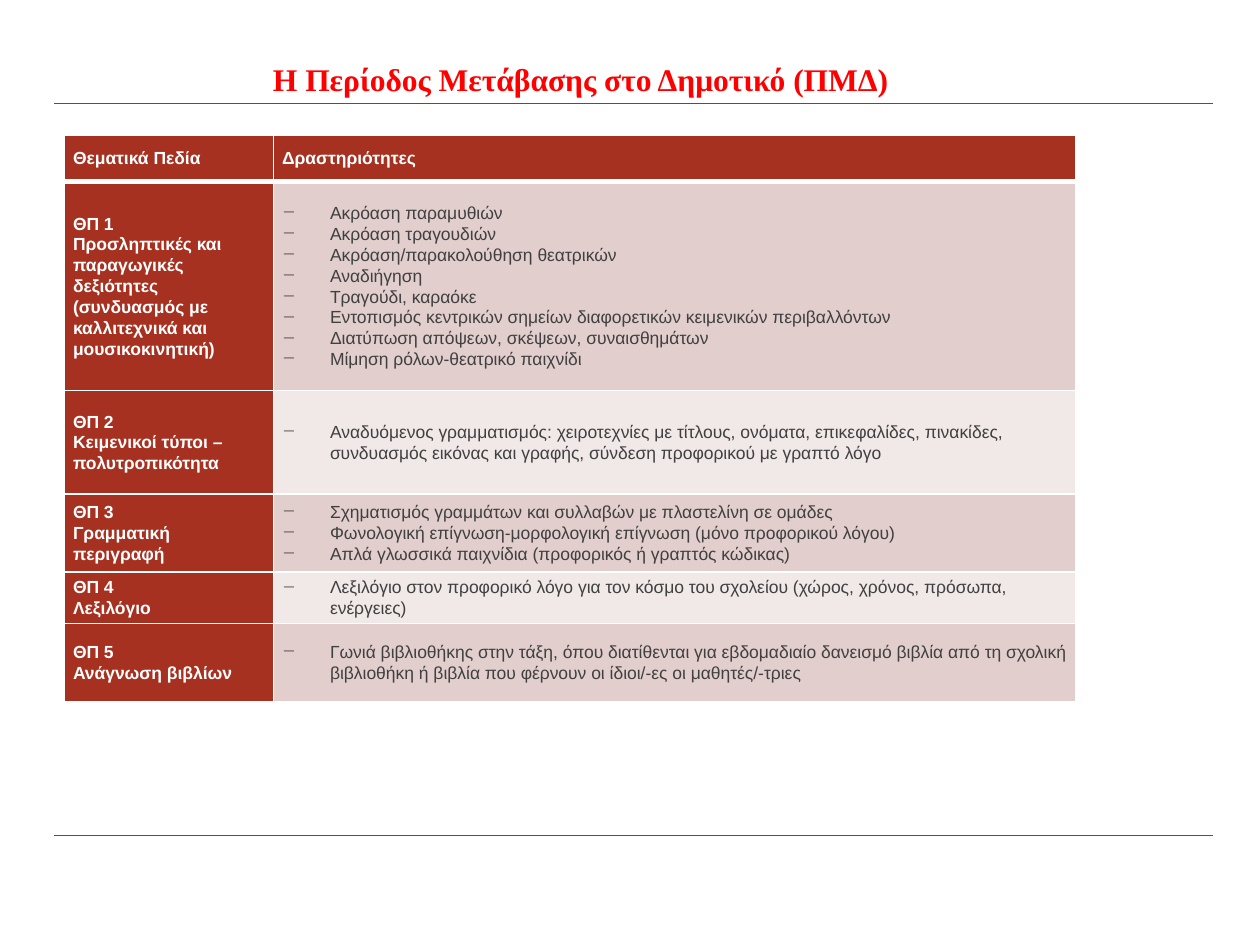
from lxml import etree
from pptx import Presentation
from pptx.dml.color import RGBColor
from pptx.enum.shapes import MSO_CONNECTOR
from pptx.enum.text import MSO_ANCHOR, MSO_AUTO_SIZE, PP_ALIGN
from pptx.oxml.ns import qn
from pptx.util import Inches, Pt

STRAIGHT = MSO_CONNECTOR.STRAIGHT
MIDDLE, BOTTOM = MSO_ANCHOR.MIDDLE, MSO_ANCHOR.BOTTOM
CENTER = PP_ALIGN.CENTER
NO_AUTOFIT = MSO_AUTO_SIZE.NONE

BRICK = RGBColor(0xA6, 0x31, 0x21)
RED = RGBColor(0xFF, 0x00, 0x00)
WHITE = RGBColor(0xFF, 0xFF, 0xFF)
GREY = RGBColor(0x40, 0x40, 0x40)
BANDS = (RGBColor(0xE1, 0xCE, 0xCD), RGBColor(0xF1, 0xE8, 0xE8))

COLUMN_WIDTHS = (1.66, 6.37)
ROW_HEIGHTS = (0.37, 1.66, 0.82, 0.62, 0.41, 0.62)
HEADER = ("Θεματικά Πεδία", "Δραστηριότητες")
FIELDS = [
    (["ΘΠ 1", "Προσληπτικές και παραγωγικές δεξιότητες",
      "(συνδυασμός με καλλιτεχνικά και μουσικοκινητική)"],
     ["Ακρόαση παραμυθιών",
      "Ακρόαση τραγουδιών",
      "Ακρόαση/παρακολούθηση θεατρικών",
      "Αναδιήγηση",
      "Τραγούδι, καραόκε",
      "Εντοπισμός κεντρικών σημείων διαφορετικών κειμενικών περιβαλλόντων",
      "Διατύπωση απόψεων, σκέψεων, συναισθημάτων",
      "Μίμηση ρόλων-θεατρικό παιχνίδι"]),
    (["ΘΠ 2", "Κειμενικοί τύποι – πολυτροπικότητα"],
     ["Αναδυόμενος γραμματισμός: χειροτεχνίες με τίτλους, ονόματα, "
      "επικεφαλίδες, πινακίδες, συνδυασμός εικόνας και γραφής, σύνδεση "
      "προφορικού με γραπτό λόγο"]),
    (["ΘΠ 3", "Γραμματική περιγραφή"],
     ["Σχηματισμός γραμμάτων και συλλαβών με πλαστελίνη σε ομάδες",
      "Φωνολογική επίγνωση-μορφολογική επίγνωση (μόνο προφορικού λόγου)",
      "Απλά γλωσσικά παιχνίδια (προφορικός ή γραπτός κώδικας)"]),
    (["ΘΠ 4", "Λεξιλόγιο"],
     ["Λεξιλόγιο στον προφορικό λόγο για τον κόσμο του σχολείου (χώρος, "
      "χρόνος, πρόσωπα, ενέργειες)"]),
    (["ΘΠ 5", "Ανάγνωση βιβλίων"],
     ["Γωνιά βιβλιοθήκης στην τάξη, όπου διατίθενται για εβδομαδιαίο "
      "δανεισμό βιβλία από τη σχολική βιβλιοθήκη ή βιβλία που φέρνουν οι "
      "ίδιοι/-ες οι μαθητές/-τριες"]),
]


def add_rule(page, left, top, width):
    rule = page.shapes.add_connector(
        STRAIGHT, Inches(left), Inches(top), Inches(left + width), Inches(top))
    rule.line.color.rgb = BRICK
    rule.line.width = Pt(0.5)
    etree.SubElement(rule._element.spPr, qn("a:effectLst"))


def place_title(page, left, top, width, height):
    title = page.shapes.title
    title.left, title.top = Inches(left), Inches(top)
    title.width, title.height = Inches(width), Inches(height)
    frame = title.text_frame
    frame.text = "Η Περίοδος Μετάβασης στο Δημοτικό (ΠΜΔ)"
    frame.auto_size = NO_AUTOFIT
    frame.vertical_anchor = BOTTOM
    para = frame.paragraphs[0]
    para.alignment = CENTER
    para.line_spacing = 0.9
    font = para.runs[0].font
    font.name, font.size, font.bold = "Times New Roman", Pt(18), True
    font.color.rgb = RED


def set_borders(cell, bottom, top):
    """Draw white borders; they must precede the fill in the cell properties."""
    properties = cell._tc.get_or_add_tcPr()
    widths = {"a:lnL": 1, "a:lnR": 1, "a:lnT": top, "a:lnB": bottom}
    for position, (tag, width) in enumerate(widths.items()):
        line = etree.Element(qn(tag), w=str(Pt(width)))
        fill = etree.SubElement(line, qn("a:solidFill"))
        etree.SubElement(fill, qn("a:srgbClr"), val=str(WHITE))
        properties.insert(position, line)


def add_dash(para):
    properties = para._p.get_or_add_pPr()
    properties.set("marL", str(Inches(0.38)))
    properties.set("indent", str(Inches(-0.38)))
    etree.SubElement(properties, qn("a:buChar"), char="−")


def fill_cell(cell, lines, fill, color, dashed=False, bottom=1, top=1):
    cell.fill.solid()
    cell.fill.fore_color.rgb = fill
    set_borders(cell, bottom, top)
    cell.vertical_anchor = MIDDLE
    cell.margin_left = cell.margin_right = Inches(0.07)
    cell.margin_top = cell.margin_bottom = 0
    cell.text_frame.text = "\n".join(lines)
    for para in cell.text_frame.paragraphs:
        if dashed:
            add_dash(para)
        para.line_spacing = 1.07
        font = para.runs[0].font
        font.name, font.size, font.bold = "Arial", Pt(10), not dashed
        font.color.rgb = color


def add_activity_table(page, left, top):
    table = page.shapes.add_table(
        len(ROW_HEIGHTS), len(COLUMN_WIDTHS), Inches(left), Inches(top),
        Inches(sum(COLUMN_WIDTHS)), Inches(sum(ROW_HEIGHTS))).table
    for column, width in zip(table.columns, COLUMN_WIDTHS):
        column.width = Inches(width)
    for row, height in zip(table.rows, ROW_HEIGHTS):
        row.height = Inches(height)
    for column, label in enumerate(HEADER):
        fill_cell(table.cell(0, column), [label], BRICK, WHITE, bottom=3)
    for row, (field, activities) in enumerate(FIELDS, start=1):
        top_width = 3 if row == 1 else 1
        fill_cell(table.cell(row, 0), field, BRICK, WHITE, top=top_width)
        fill_cell(table.cell(row, 1), activities, BANDS[(row - 1) % 2], GREY,
                  dashed=True, top=top_width)


def main():
    deck = Presentation()
    deck.slide_width, deck.slide_height = Inches(10), Inches(7.5)
    page = deck.slides.add_slide(deck.slide_layouts[5])
    for top in (6.63, 0.82):
        add_rule(page, 0.43, top, 9.2)
    place_title(page, 0.44, 0.44, 8.34, 0.39)
    add_activity_table(page, 0.51, 1.07)
    deck.save("out.pptx")


if __name__ == "__main__":
    main()
